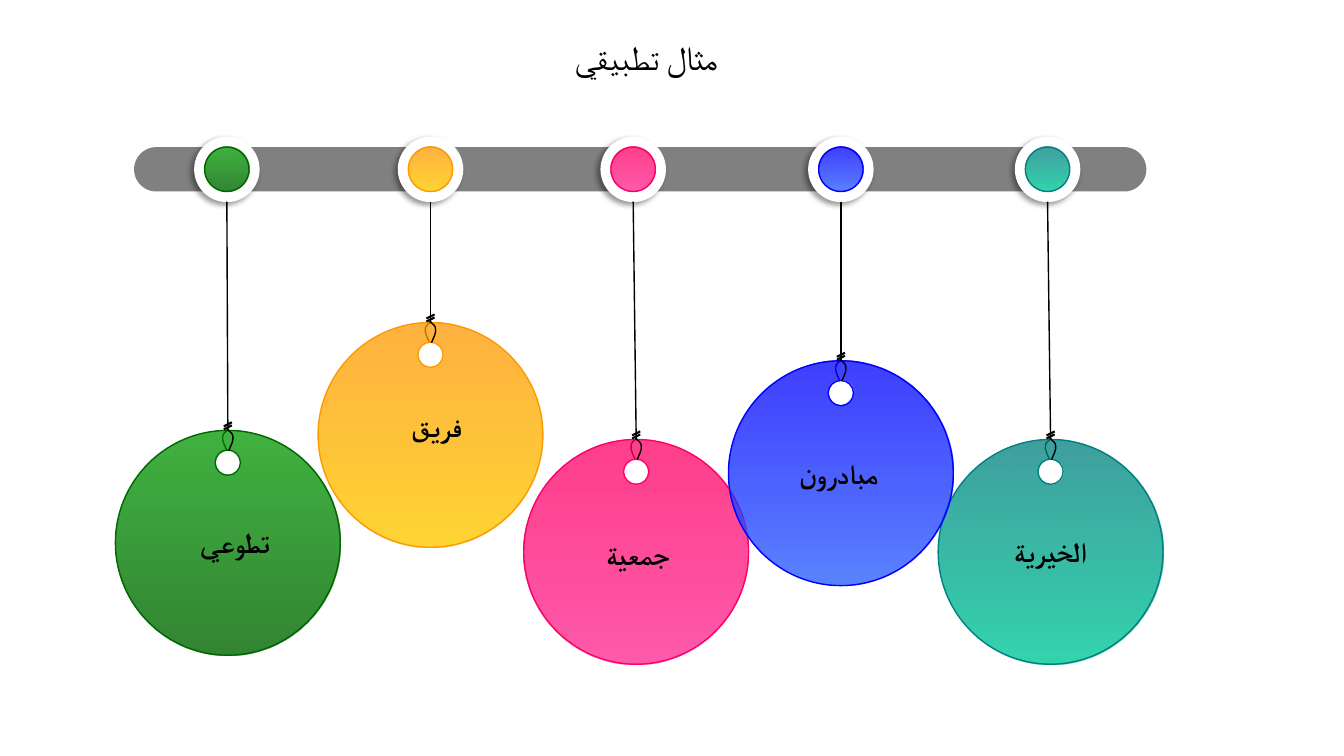
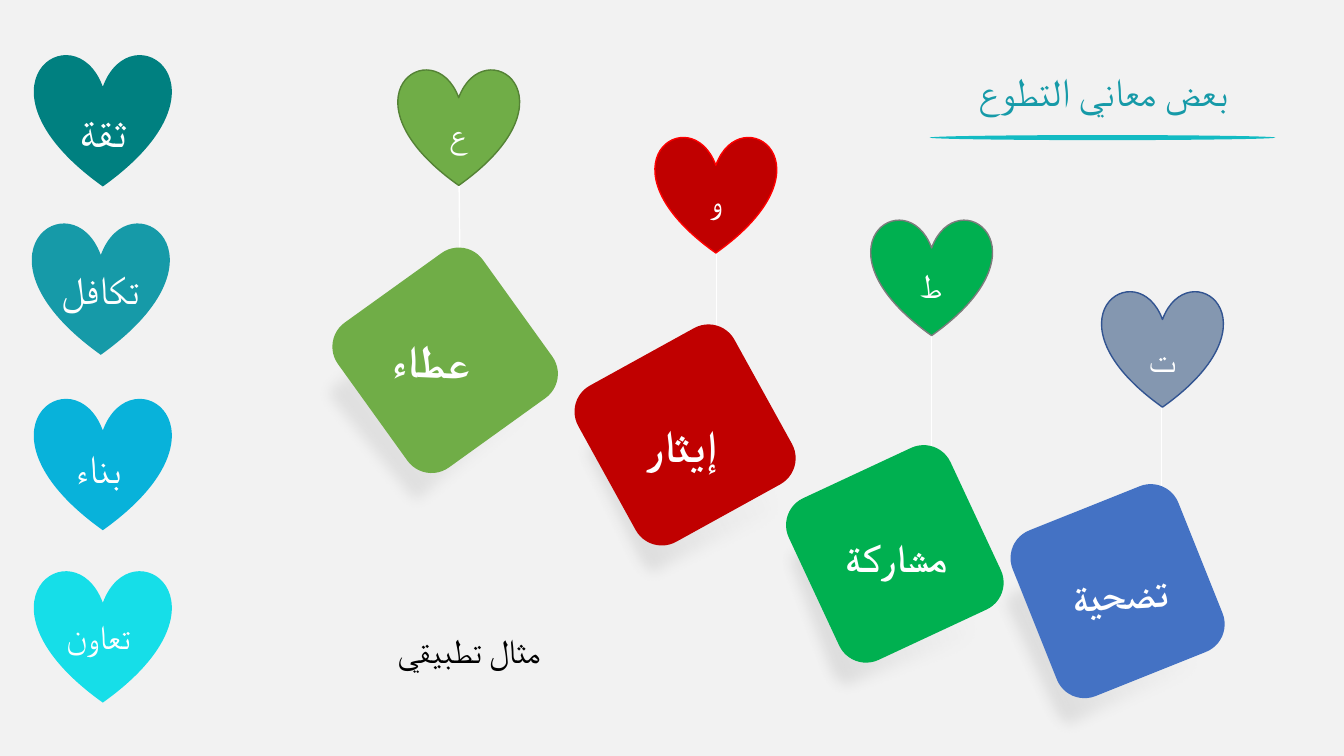
from typing import NamedTuple

from lxml.etree import SubElement
from pptx import Presentation
from pptx.dml.color import RGBColor
from pptx.enum.shapes import MSO_CONNECTOR as Link, MSO_SHAPE as Kind
from pptx.enum.text import MSO_AUTO_SIZE as AutoSize, PP_ALIGN as Align
from pptx.oxml.ns import qn
from pptx.util import Inches, Pt

FONT = "Calibri"
BLACK, WHITE, GREY = "000000", "FFFFFF", "808080"
PAPER, TEAL, AQUA = "F2F2F2", "169AA8", "13BBC3"
DISC, HOLE, RING, DOT, BAR = 2.23, 0.25, 0.65, 0.44, 0.44
BAR_TOP = 1.46
TILE = 1.77
BEND = 0.55
LOOP = [(0.01, -0.01), (-0.02, 0.01), (-0.05, 0.03), (-0.05, 0.06),
        (-0.06, 0.1), (-0.03, 0.15), (-0.01, 0.2)]
UNIT_CIRCLE = [(1, 0), (1, BEND), (BEND, 1), (0, 1), (-BEND, 1), (-1, BEND), (-1, 0),
               (-1, -BEND), (-BEND, -1), (0, -1), (BEND, -1), (1, -BEND), (1, 0)]


class Tag(NamedTuple):
    word: str
    dot_x: float
    disc_x: float
    top: float
    word_x: float
    word_y: float
    upper: str
    lower: str
    edge: str


class Tile(NamedTuple):
    word: str
    size: int
    word_box: tuple
    word_turn: float
    spot: tuple
    turn: float
    shade_spot: tuple
    shade_turn: float
    color: str


class Heart(NamedTuple):
    text: str
    size: int
    spot: tuple
    text_box: tuple
    color: str
    edge: str | None = None


TAGS = [
    Tag("تطوعي", 2.25, 2.26, 4.27, 2.33, 5.16, "009900", "006600", "006600"),
    Tag("فريق", 4.27, 4.27, 3.2, 4.33, 4.01, "FF9900", "FFCC00", "FF9900"),
    Tag("الخيرية", 10.39, 10.42, 4.36, 10.42, 5.25, "008080", "00CC99", "008080"),
    Tag("جمعية", 6.28, 6.31, 4.36, 6.33, 5.28, "FF0066", "FF3399", "FF0066"),
    Tag("مبادرون", 8.34, 8.34, 3.58, 8.32, 4.48, "0000FF", "3366FF", "0000FF"),
]
STRINGS = [
    ((7.1, 2.31), (7.1, 3.42), 0.5),
    ((4.55, 1.46), (4.57, 3.48), 1),
    ((9.24, 3.01), (9.24, 4.49), 0.5),
    ((11.52, 3.75), (11.52, 4.85), 0.5),
]
TILES = [
    Tile("تضحية", 28, (10.26, 5.61, 1.7, 0.57), 356.7,
         (10.2, 4.98), 68.2, (10.01, 5.38), 245.5, "4472C4"),
    Tile("مشاركة", 28, (7.97, 5.24, 1.84, 0.57), 0,
         (7.99, 4.61), 65, (7.85, 5.02), 249.6, "00B050"),
    Tile("إيثار", 32, (5.93, 4.09, 1.66, 0.64), 0,
         (5.91, 3.43), 61.1, (5.86, 3.87), 243.6, "C00000"),
    Tile("عطاء", 32, (3.58, 3.26, 1.41, 0.64), 2.6,
         (3.53, 2.69), 54.3, (3.34, 3.1), 231, "70AD47"),
]
LETTER_HEARTS = [
    Heart("ت", 24, (10.93, 2.88), (11.29, 3.31, 0.48, 0.5), "8497B0", "325491"),
    Heart("ط", 24, (8.64, 2.17), (9.02, 2.58, 0.43, 0.5), "00B050", "7C7C7C"),
    Heart("و", 24, (6.5, 1.35), (6.93, 1.73, 0.35, 0.5), "C00000", "FF0000"),
    Heart("ع", 24, (3.95, 0.68), (4.35, 1.07, 0.4, 0.5), "70AD47", "548235"),
]
VALUE_HEARTS = [
    Heart("ثقة", 32, (0.34, 0.53), (0.56, 0.97, 0.92, 0.64), "008080"),
    Heart("تكافل", 28, (0.32, 2.2), (0.09, 2.58, 1.81, 0.57), TEAL),
    Heart("بناء", 28, (0.34, 3.94), (0.5, 4.36, 0.97, 0.57), "08B2DA"),
    Heart("تعاون", 24, (0.34, 5.65), (0.07, 6.06, 1.81, 0.5), "16DEE8"),
]


def rgb(color):
    return RGBColor.from_string(color)


def apply(target, values):
    for name, value in values.items():
        setattr(target, name, value)


def new_page(deck, color):
    page = deck.slides.add_slide(deck.slide_layouts[6])
    page.background.fill.solid()
    page.background.fill.fore_color.rgb = rgb(color)
    return page


def paint(shape, fill=None, edge=None, width=1):
    shape.shadow.inherit = False
    if fill is None:
        shape.fill.background()
    elif isinstance(fill, str):
        shape.fill.solid()
        shape.fill.fore_color.rgb = rgb(fill)
    else:
        shape.fill.gradient()
        shape.fill.gradient_angle = 270
        for stop, (place, color, opacity) in zip(shape.fill.gradient_stops, fill):
            stop.position = place
            stop.color.rgb = rgb(color)
        tones = shape._element.spPr.iter(qn("a:srgbClr"))
        for tone, (place, color, opacity) in zip(tones, fill):
            SubElement(tone, qn("a:alpha"), val=str(opacity * 1000))
    if edge:
        shape.line.color.rgb = rgb(edge)
        shape.line.width = Pt(width)
    else:
        shape.line.fill.background()


def add_effect(shape, kind, **values):
    effects = shape._element.spPr.find(qn("a:effectLst"))
    return SubElement(effects, qn(kind), values)


def add_shape(page, kind, at, fill, edge=None, turn=0):
    shape = page.shapes.add_shape(kind, *map(Inches, at))
    paint(shape, fill, edge)
    shape.rotation = turn
    return shape


def add_line(page, start, end, color, width):
    line = page.shapes.add_connector(Link.STRAIGHT, *map(Inches, (*start, *end)))
    line.line.color.rgb = rgb(color)
    line.line.width = Pt(width)
    SubElement(line._element.spPr, qn("a:effectLst"))


def add_text(page, text, at, size, color, bold=False, turn=0):
    box = page.shapes.add_textbox(*map(Inches, at))
    box.rotation = turn
    apply(box.text_frame, {"word_wrap": True, "auto_size": AutoSize.SHAPE_TO_FIT_TEXT})
    para = box.text_frame.paragraphs[0]
    para.alignment = Align.CENTER
    para._p.get_or_add_pPr().set("rtl", "1")
    span = para.add_run()
    span.text = text
    apply(span.font, {"name": FONT, "size": Pt(size), "bold": bold})
    span.font.color.rgb = rgb(color)
    SubElement(span._r.rPr, qn("a:cs"), typeface=FONT)


def add_caption(page, left, top):
    add_text(page, "مثال تطبيقي", (left, top, 3.72, 0.5), 24, BLACK)


def bend_segments(shape):
    for outline in shape._element.iter(qn("a:path")):
        segments = outline.findall(qn("a:lnTo"))
        for curve, *others in zip(segments[::3], segments[1::3], segments[2::3]):
            curve.tag = qn("a:cubicBezTo")
            for other in others:
                curve.append(other[0])
                outline.remove(other)


def add_curves(page, contours, closed, fill, edge):
    scaled = [[(Inches(x), Inches(y)) for x, y in points] for points in contours]
    builder = page.shapes.build_freeform(*scaled[0][0], scale=1.0)
    for index, points in enumerate(scaled):
        if index:
            builder.move_to(*points[0])
        builder.add_line_segments(points[1:], close=closed)
    shape = builder.convert_to_shape()
    bend_segments(shape)
    paint(shape, fill, edge)


def circle(x, y, size, direction):
    return [(x + size / 2 * dx, y + direction * size / 2 * dy) for dx, dy in UNIT_CIRCLE]


def add_loop(page, x, top, side):
    points = [(x + side * dx, top + dy) for dx, dy in LOOP]
    add_curves(page, [points], False, None, BLACK)


def centered(x, y, size):
    return x - size / 2, y - size / 2, size, size


def add_tag(page, tag):
    shades = [(0.01, tag.upper, 75), (1, tag.lower, 80)]
    x, top = tag.disc_x, tag.top
    pin_y = BAR_TOP + BAR / 2
    add_loop(page, x, top, 1)
    contours = [circle(x, top + DISC / 2, DISC, 1), circle(x, top + 0.32, HOLE, -1)]
    add_curves(page, contours, True, shades, tag.edge)
    ring = add_shape(page, Kind.OVAL, centered(tag.dot_x, pin_y, RING), WHITE)
    shadow = add_effect(ring, "a:outerShdw", blurRad=str(Pt(4)), dist=str(Pt(3)),
                        dir="8100000", algn="ctr", rotWithShape="0")
    tone = SubElement(shadow, qn("a:srgbClr"), val=BLACK)
    SubElement(tone, qn("a:alpha"), val="40000")
    add_shape(page, Kind.OVAL, centered(tag.dot_x, pin_y, DOT), shades, tag.edge)
    add_line(page, (tag.dot_x, 2), (x, top), BLACK, 1)
    add_loop(page, x, top, -1)
    for rise in (0.08, 0.05):
        add_line(page, (x + 0.04, top - rise), (x - 0.04, top - rise + 0.04), BLACK, 1.5)
    add_text(page, tag.word, (tag.word_x - 0.88, tag.word_y, 1.76, 0.44), 20, BLACK, True)


def add_tile(page, tile):
    fade = [(0, "404040", 25), (0.96, WHITE, 0)]
    shade = add_shape(page, Kind.ROUNDED_RECTANGLE, (*tile.shade_spot, TILE, TILE),
                      fade, turn=tile.shade_turn)
    add_effect(shade, "a:softEdge", rad=str(Pt(10)))
    add_shape(page, Kind.ROUNDED_RECTANGLE, (*tile.spot, TILE, TILE),
              tile.color, turn=tile.turn)
    add_text(page, tile.word, tile.word_box, tile.size, WHITE, True, tile.word_turn)


def add_heart(page, heart, size):
    add_shape(page, Kind.HEART, (*heart.spot, *size), heart.color, heart.edge)
    add_text(page, heart.text, heart.text_box, heart.size, WHITE)


def build_hanging_tags(deck):
    page = new_page(deck, WHITE)
    bar = add_shape(page, Kind.ROUNDED_RECTANGLE, (1.33, BAR_TOP, 10.04, BAR), GREY)
    bar.adjustments[0] = 0.5
    for tag in TAGS:
        add_tag(page, tag)
    add_caption(page, 4.55, 0.32)


def build_meanings(deck):
    page = new_page(deck, PAPER)
    for start, end, width in STRINGS:
        add_line(page, start, end, WHITE, width)
    for tile in TILES:
        add_tile(page, tile)
    for heart in LETTER_HEARTS:
        add_heart(page, heart, (1.2, 1.16))
    for heart in VALUE_HEARTS:
        add_heart(page, heart, (1.36, 1.32))
    add_text(page, "بعض معاني التطوع", (8.89, 0.62, 4.1, 0.57), 28, TEAL)
    add_shape(page, Kind.OVAL, (9.22, 1.34, 3.43, 0.05), AQUA)
    add_caption(page, 2.79, 6.2)


def main():
    deck = Presentation()
    apply(deck, {"slide_width": Inches(13.33), "slide_height": Inches(7.5)})
    build_hanging_tags(deck)
    build_meanings(deck)
    deck.save("out.pptx")


if __name__ == "__main__":
    main()
